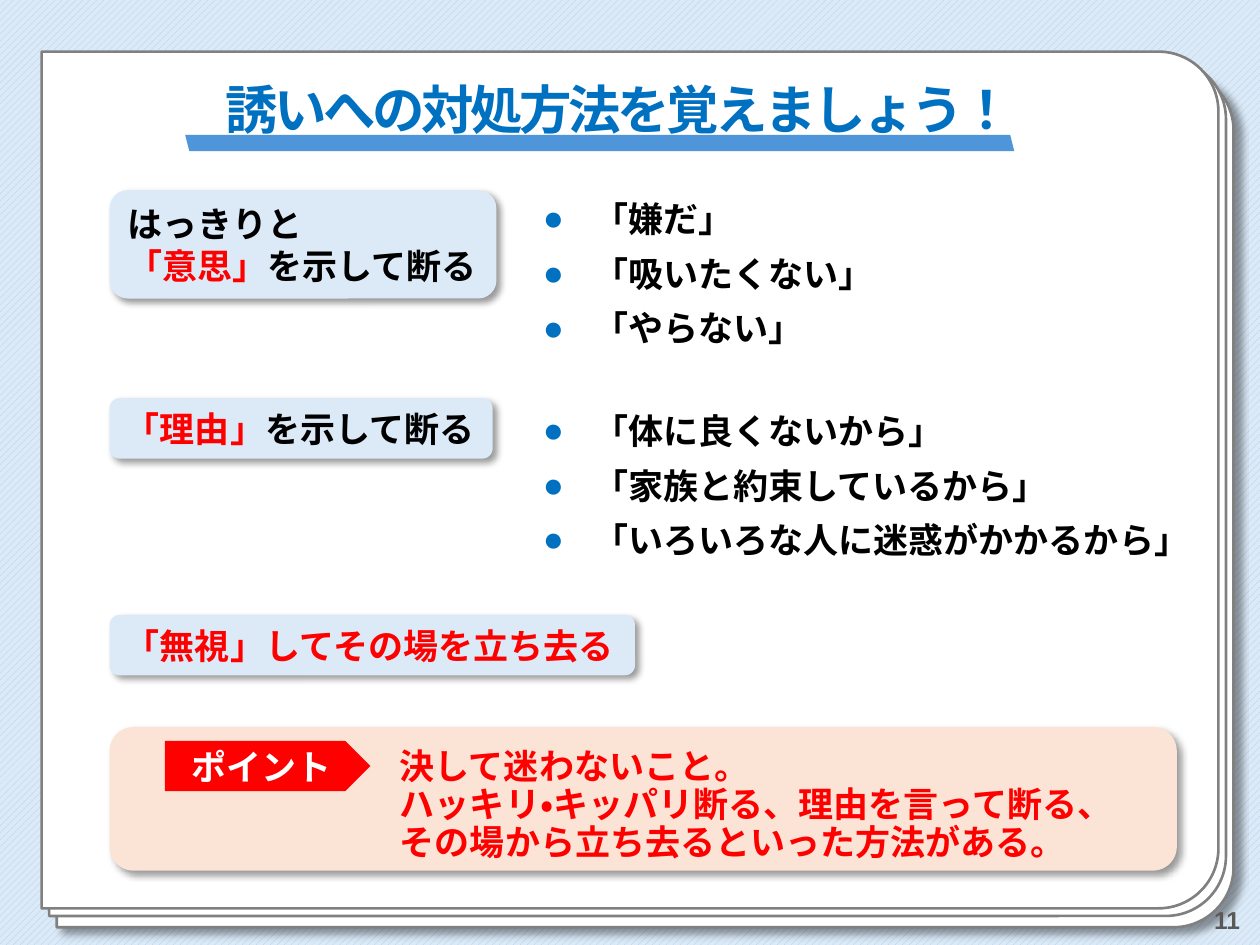
"""Build the slide on ways to turn down an invitation."""
from dataclasses import dataclass

import pptx
import pptx.dml.color
import pptx.enum.dml
import pptx.enum.lang
import pptx.enum.shapes
import pptx.enum.text
import pptx.oxml
import pptx.oxml.ns
import pptx.util
from pptx.dml.color import RGBColor
from pptx.util import Inches

WHITE = RGBColor(0xFF, 0xFF, 0xFF)
BLACK = RGBColor(0x00, 0x00, 0x00)
RED = RGBColor(0xFF, 0x00, 0x00)
BLUE = RGBColor(0x00, 0x70, 0xC0)
UNDERLINE_BLUE = RGBColor(0x4E, 0x95, 0xD9)
PALE_BLUE = RGBColor(0xDC, 0xEA, 0xF7)
STRIPE_BLUE = RGBColor(0xA6, 0xCA, 0xEC)
PEACH = RGBColor(0xFB, 0xE3, 0xD6)
GRAY = RGBColor(0x80, 0x80, 0x80)
DARK_GRAY = RGBColor(0x59, 0x59, 0x59)

SHAPE = pptx.enum.shapes.MSO_SHAPE
ALIGN = pptx.enum.text.PP_ALIGN
MIDDLE = pptx.enum.text.MSO_ANCHOR.MIDDLE
FIT_SHAPE = pptx.enum.text.MSO_AUTO_SIZE.SHAPE_TO_FIT_TEXT
NO_FIT = pptx.enum.text.MSO_AUTO_SIZE.NONE

Area = tuple[float, float, float, float]
Spans = list[tuple[str, RGBColor]]


@dataclass
class Label:
    """A pale blue label naming one way to refuse."""
    area: Area
    spans: Spans


@dataclass
class Phrases:
    """A bulleted list of things to say."""
    area: Area
    lines: list[str]


LABELS = [
    Label((0.87, 1.51, 3.07, 0.86),
          [("はっきりと\n", BLACK), ("「意思」", RED), ("を示して断る", BLACK)]),
    Label((0.87, 3.16, 3.04, 0.48), [("「理由」", RED), ("を示して断る", BLACK)]),
    Label((0.87, 4.88, 4.17, 0.48), [("「無視」してその場を立ち去る", RED)]),
]
PHRASES = [
    Phrases((4.21, 1.42, 2.85, 1.38), ["「嫌だ」", "「吸いたくない」", "「やらない」"]),
    Phrases((4.21, 3.10, 5.37, 1.38),
            ["「体に良くないから」", "「家族と約束しているから」", "「いろいろな人に迷惑がかかるから」"]),
]
POINT = "決して迷わないこと。\nハッキリ・キッパリ断る、理由を言って断る、\nその場から立ち去るといった方法がある。"


def apply(target, values: dict) -> None:
    """Set each named attribute on the target."""
    for name, value in values.items():
        setattr(target, name, value)


def place(shape, area: Area) -> None:
    """Move and size a shape."""
    apply(shape, dict(zip(("left", "top", "width", "height"), map(Inches, area))))


def add_shadow(shape, distance: float) -> None:
    """Give a shape a soft shadow to the lower right."""
    point = pptx.util.Pt(1)
    shape._element.spPr.append(pptx.oxml.parse_xml(
        f'<a:effectLst {pptx.oxml.ns.nsdecls("a")}>'
        f'<a:outerShdw blurRad="{4 * point}" dist="{int(distance * point)}" dir="2700000" '
        'algn="tl" rotWithShape="0"><a:srgbClr val="000000"><a:alpha val="40000"/>'
        '</a:srgbClr></a:outerShdw></a:effectLst>'))


def add_shape(page, kind, area: Area, fill: RGBColor, shadow: float = 0):
    """Draw a filled shape without an outline."""
    shape = page.shapes.add_shape(kind, *map(Inches, area))
    shape.fill.solid()
    shape.fill.fore_color.rgb = fill
    shape.line.fill.background()
    if shadow:
        add_shadow(shape, shadow)
    else:
        shape.shadow.inherit = False
    return shape


def write(para, spans: Spans, size: float = 20, align=ALIGN.LEFT, spacing=None) -> None:
    """Write coloured bold spans into a paragraph."""
    apply(para, {"alignment": align, "line_spacing": spacing})
    for text, color in spans:
        for index, line in enumerate(text.split("\n")):
            if index:
                para.add_line_break()
            if line:
                span = para.add_run()
                span.text = line
                apply(span.font, {"name": "Arial", "size": pptx.util.Pt(size), "bold": True,
                                  "language_id": pptx.enum.lang.MSO_LANGUAGE_ID.JAPANESE})
                span.font.color.rgb = color


def set_indent(para, margin: float, first: float) -> None:
    """Set the left margin and first line indent of a paragraph."""
    properties = para._p.get_or_add_pPr()
    properties.set("marL", str(Inches(margin)))
    properties.set("indent", str(Inches(first)))


def add_bullet(para) -> None:
    """Give a paragraph a blue round bullet."""
    set_indent(para, 0.4, -0.4)
    properties = para._p.get_or_add_pPr()
    for markup in (f'<a:buClr {{}}><a:srgbClr val="{BLUE}"/></a:buClr>',
                   '<a:buFont {} typeface="Arial"/>', '<a:buChar {} char="●"/>'):
        properties.append(pptx.oxml.parse_xml(markup.format(pptx.oxml.ns.nsdecls("a"))))


def add_sheets(page) -> None:
    """Draw the stack of paper sheets behind the content."""
    for left, top, shadow in ((1.72, -0.71, 5), (1.66, -0.80, 0), (1.60, -0.86, 0)):
        sheet = add_shape(page, SHAPE.ROUND_2_SAME_RECTANGLE, (left, top, 6.8, 9.34), WHITE, shadow)
        sheet.adjustments[0] = 0.07
        sheet.rotation = 90
        sheet.line.color.rgb = GRAY
        sheet.line.width = pptx.util.Pt(1.5)


def add_title(page) -> None:
    """Fill the title and underline it with a slanted bar."""
    title = page.shapes.title
    place(title, (0.68, 0.35, 8.47, 1.08))
    apply(title.text_frame, {"vertical_anchor": MIDDLE, "word_wrap": True, "auto_size": NO_FIT})
    para = title.text_frame.paragraphs[0]
    write(para, [("誘いへの対処方法を覚えましょう！", BLUE)], 30, ALIGN.CENTER, 0.9)
    para.runs[0].font._element.set("spc", "-200")
    page.shapes._spTree.append(title._element)
    bar = add_shape(page, SHAPE.PARALLELOGRAM, (1.47, 1.07, 6.58, 0.13), UNDERLINE_BLUE)
    bar._element.spPr.find(pptx.oxml.ns.qn("a:xfrm")).set("flipH", "1")


def add_label(page, label: Label) -> None:
    """Draw one label."""
    shape = add_shape(page, SHAPE.ROUNDED_RECTANGLE, label.area, PALE_BLUE, 3)
    apply(shape.text_frame, {"vertical_anchor": MIDDLE, "word_wrap": False, "auto_size": FIT_SHAPE})
    write(shape.text_frame.paragraphs[0], label.spans)


def add_phrases(page, phrases: Phrases) -> None:
    """Draw one bulleted list."""
    frame = page.shapes.add_textbox(*map(Inches, phrases.area)).text_frame
    apply(frame, {"word_wrap": False, "auto_size": FIT_SHAPE})
    for index, line in enumerate(phrases.lines):
        para = frame.add_paragraph() if index else frame.paragraphs[0]
        add_bullet(para)
        write(para, [(line, BLACK)], spacing=1.3)


def add_point(page) -> None:
    """Draw the key point panel and its tag."""
    panel = add_shape(page, SHAPE.ROUNDED_RECTANGLE, (0.87, 5.77, 8.47, 1.14), PEACH, 3)
    apply(panel.text_frame, {"vertical_anchor": MIDDLE, "word_wrap": True,
                             "margin_top": Inches(0.12), "margin_bottom": 0})
    para = panel.text_frame.paragraphs[0]
    set_indent(para, 2.15, 0)
    write(para, [(POINT, RED)], spacing=0.9)
    tag = add_shape(page, SHAPE.PENTAGON, (1.31, 5.88, 1.63, 0.4), RED)
    apply(tag.text_frame, {"vertical_anchor": MIDDLE, "word_wrap": False})
    write(tag.text_frame.paragraphs[0], [("ポイント", WHITE)], align=ALIGN.CENTER)


def add_page_number(page) -> None:
    """Write the page number in the lower right corner."""
    box = page.shapes.add_textbox(*map(Inches, (7.69, 7.1, 2.25, 0.4)))
    apply(box.text_frame, {"vertical_anchor": MIDDLE, "word_wrap": True})
    write(box.text_frame.paragraphs[0], [("11", DARK_GRAY)], 14, ALIGN.RIGHT)


def main() -> None:
    """Build and save the deck."""
    deck = pptx.Presentation()
    apply(deck, {"slide_width": Inches(10), "slide_height": Inches(7.5)})
    page = deck.slides.add_slide(deck.slide_layouts[5])
    backdrop = page.background.fill
    backdrop.patterned()
    backdrop.pattern = pptx.enum.dml.MSO_PATTERN.WIDE_UPWARD_DIAGONAL
    backdrop.fore_color.rgb = STRIPE_BLUE
    backdrop.back_color.rgb = PALE_BLUE
    add_sheets(page)
    add_page_number(page)
    add_title(page)
    add_point(page)
    for label in LABELS:
        add_label(page, label)
    for phrases in PHRASES:
        add_phrases(page, phrases)
    deck.save("out.pptx")


if __name__ == "__main__":
    main()
